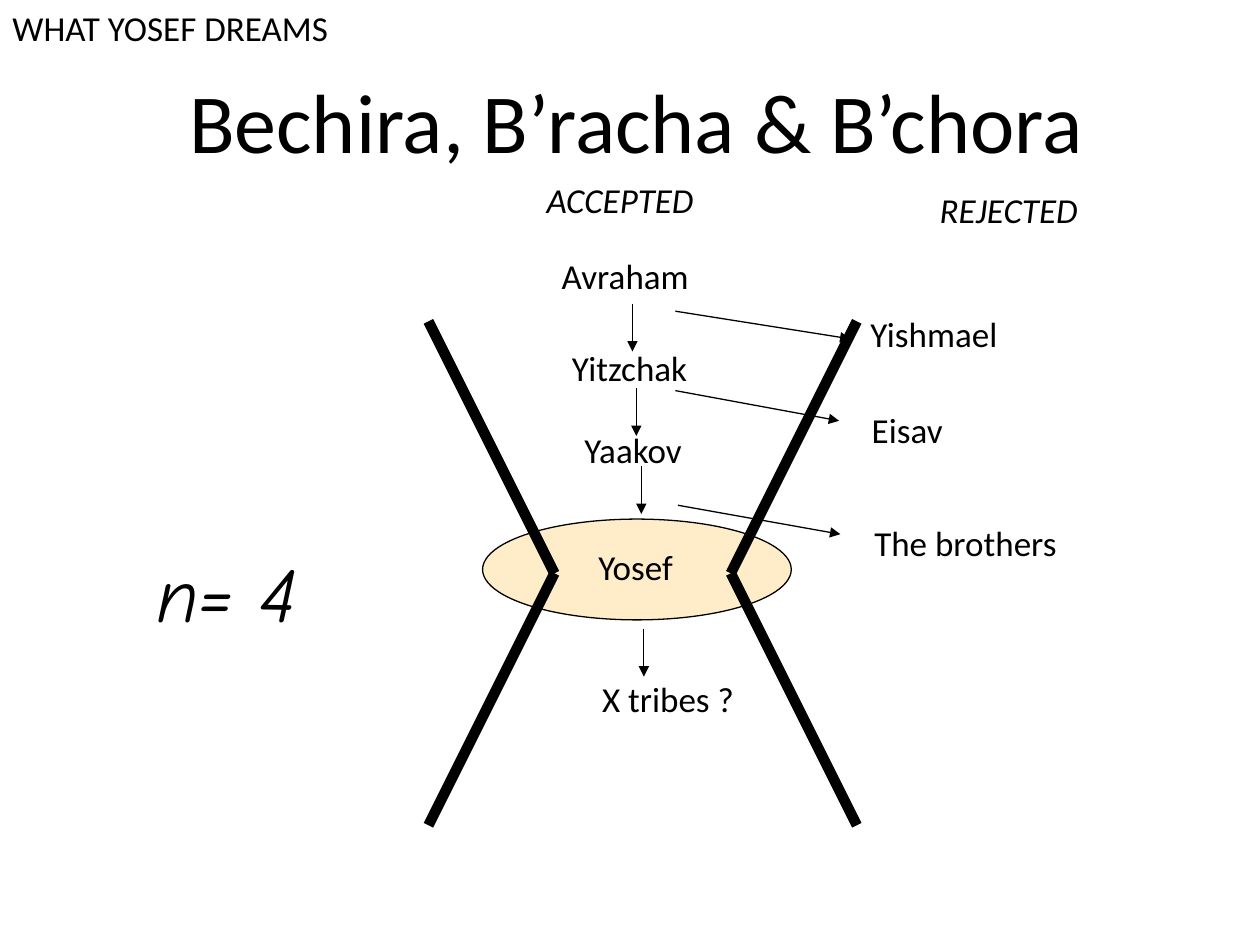
from typing import NamedTuple

from lxml import etree
from pptx import Presentation
from pptx.dml.color import RGBColor
from pptx.enum import shapes, text
from pptx.oxml.ns import qn
from pptx.util import Inches, Pt

COLORS = {"ink": "000000", "gold": "FFCC66"}


class Label(NamedTuple):
    wording: str
    left: float
    top: float
    width: float
    height: float = 0.44
    size: int = 20
    font: str = "Calibri"
    italic: bool = False
    centered: bool = False


class Line(NamedTuple):
    x1: float
    y1: float
    x2: float
    y2: float
    weight: float = 0.75
    arrow: bool = True


TITLE = Label("Bechira, B’racha & B’chora", 0.8, 0.15, 8.5, 1.61, 48, centered=True)

LABELS = [
    Label("WHAT YOSEF DREAMS", 0, 0, 4.02),
    Label("n= 4", 1.14, 4.28, 1.77, 0.84, 44, "Comic Neue", italic=True),
    # Column headings
    Label("ACCEPTED", 4.24, 1.37, 1.56, italic=True),
    Label("REJECTED", 7.36, 1.45, 1.56, italic=True),
    # Accepted line of descent
    Label("Avraham", 4.36, 1.97, 1.61),
    Label("Yitzchak", 4.44, 2.7, 1.61),
    Label("Yaakov", 4.54, 3.35, 1.61),
    Label("Yosef", 4.65, 4.28, 2.38),
    Label("X tribes ?", 4.68, 5.33, 1.61),
    # Rejected relatives
    Label("Yishmael", 6.81, 2.43, 2.23),
    Label("Eisav", 6.82, 3.19, 2.28),
    Label("The brothers", 6.84, 4.09, 2.28),
]

# Hourglass: each side runs from an outer end to the waist
WAIST_Y, HALF_HEIGHT = 4.55, 2
HOURGLASS = [
    Line(outer, WAIST_Y + side * HALF_HEIGHT, inner, WAIST_Y, 6, False)
    for outer, inner in ((3.4, 4.4), (6.8, 5.8))
    for side in (-1, 1)
]

DESCENT_LENGTH = 0.38
DESCENT = [
    Line(x, y, x, y + DESCENT_LENGTH)
    for x, y in ((5.02, 2.41), (5.05, 3.08), (5.09, 3.7), (5.11, 4.99))
]
REJECTION = [
    Line(5.36, 2.47, 6.75, 2.69),
    Line(5.36, 3.1, 6.66, 3.34),
    Line(5.38, 4.01, 6.67, 4.24),
]


def color(name: str) -> RGBColor:
    return RGBColor.from_string(COLORS[name])


def add_label(page, label: Label) -> None:
    box = page.shapes.add_textbox(
        *map(Inches, (label.left, label.top, label.width, label.height)))
    frame = box.text_frame
    frame.word_wrap = True
    frame.text = label.wording
    para = frame.paragraphs[0]
    if label.centered:
        frame.vertical_anchor = text.MSO_ANCHOR.MIDDLE
        para.alignment = text.PP_ALIGN.CENTER
    font = para.runs[0].font
    font.name = label.font
    font.size = Pt(label.size)
    font.italic = label.italic
    font.color.rgb = color("ink")


def add_line(page, line: Line) -> None:
    connector = page.shapes.add_connector(
        shapes.MSO_CONNECTOR.STRAIGHT,
        *map(Inches, (line.x1, line.y1, line.x2, line.y2)))
    connector.line.color.rgb = color("ink")
    connector.line.width = Pt(line.weight)
    if line.arrow:
        outline = connector.line._get_or_add_ln()
        etree.SubElement(outline, qn("a:tailEnd"), type="triangle")
    etree.SubElement(connector._element.spPr, qn("a:effectLst"))


def add_highlight(page) -> None:
    ellipse = page.shapes.add_shape(
        shapes.MSO_SHAPE.OVAL, *map(Inches, (3.83, 4.12, 2.45, 0.8)))
    ellipse.shadow.inherit = False
    ellipse.fill.solid()
    ellipse.fill.fore_color.rgb = color("gold")
    ellipse.line.color.rgb = color("ink")
    ellipse.line.width = Pt(0.75)
    # 35 % opacity
    fill = ellipse._element.spPr.find(qn("a:solidFill"))
    etree.SubElement(fill[0], qn("a:alpha"), val="35000")


def main() -> None:
    deck = Presentation()
    deck.slide_width, deck.slide_height = Inches(10), Inches(7.5)
    page = deck.slides.add_slide(deck.slide_layouts[6])

    add_label(page, TITLE)
    add_highlight(page)
    for line in HOURGLASS + DESCENT + REJECTION:
        add_line(page, line)
    for label in LABELS:
        add_label(page, label)

    deck.save("out.pptx")


if __name__ == "__main__":
    main()
